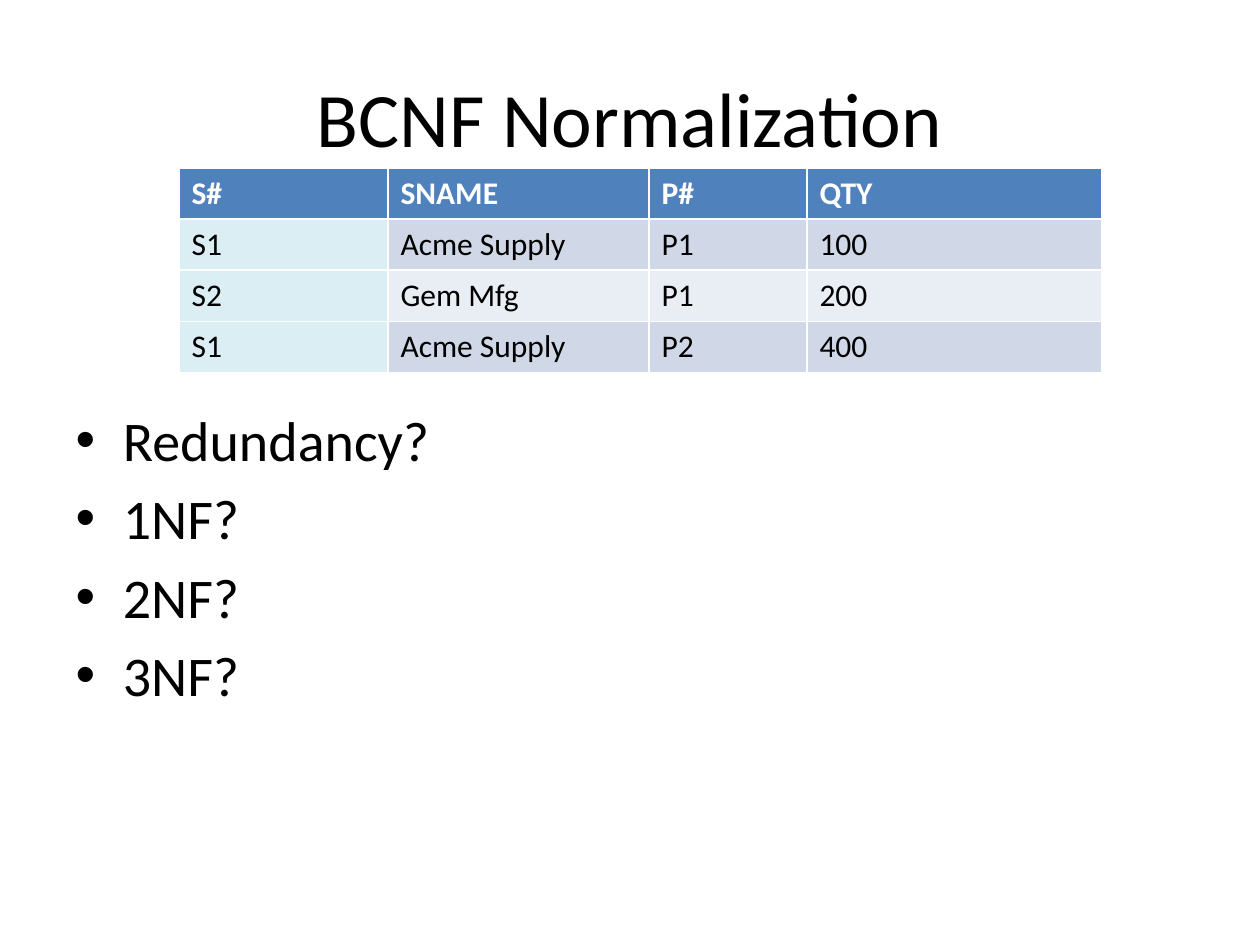
import pptx
import pptx.dml.color
import pptx.enum.text
import pptx.util

TITLE = "BCNF Normalization"
QUESTIONS = ["Redundancy?", "1NF?", "2NF?", "3NF?"]
SUPPLIES = [
    ("S#", "SNAME", "P#", "QTY"),
    ("S1", "Acme Supply", "P1", "100"),
    ("S2", "Gem Mfg", "P1", "200"),
    ("S1", "Acme Supply", "P2", "400"),
]

PX = 914400 // 126
SLIDE_SIZE = (1260, 945)
TITLE_BOX = (63, 38, 1134, 158)
BODY_BOX = (63, 399, 1134, 445)
TABLE_LEFT, TABLE_TOP = 179, 168
COLUMN_WIDTHS = [209, 261, 158, 295]
ROW_HEIGHT = 51

FONT = "Calibri"
BLACK, WHITE = "000000", "FFFFFF"
HEADER_FILL, KEY_FILL = "4F81BD", "DBEEF4"
BAND_FILLS = ["E9EDF4", "D0D8E8"]


def color(value):
    return pptx.dml.color.RGBColor.from_string(value)


def write(paragraph, text, size, fill=BLACK, bold=False, align=None):
    run = paragraph.add_run()
    run.text = text
    run.font.name = FONT
    run.font.size = pptx.util.Pt(size)
    run.font.bold = bold
    run.font.color.rgb = color(fill)
    paragraph.alignment = align


def place(shape, box):
    shape.left, shape.top, shape.width, shape.height = [length * PX for length in box]


def cell_fill(row, column):
    if row == 0:
        return HEADER_FILL
    return KEY_FILL if column == 0 else BAND_FILLS[row % 2]


def add_supplies(slide):
    box = (TABLE_LEFT, TABLE_TOP, sum(COLUMN_WIDTHS), ROW_HEIGHT * len(SUPPLIES))
    frame = slide.shapes.add_table(
        len(SUPPLIES), len(COLUMN_WIDTHS), *[length * PX for length in box])
    table = frame.table
    for column, width in zip(table.columns, COLUMN_WIDTHS):
        column.width = width * PX
    for row, values in enumerate(SUPPLIES):
        for column, value in enumerate(values):
            cell = table.cell(row, column)
            cell.fill.solid()
            cell.fill.fore_color.rgb = color(cell_fill(row, column))
            write(cell.text_frame.paragraphs[0], value, 18,
                  fill=WHITE if row == 0 else BLACK, bold=row == 0)


def main():
    presentation = pptx.Presentation()
    presentation.slide_width, presentation.slide_height = [
        length * PX for length in SLIDE_SIZE]
    slide = presentation.slides.add_slide(presentation.slide_layouts[1])

    title = slide.shapes.title
    place(title, TITLE_BOX)
    write(title.text_frame.paragraphs[0], TITLE, 44,
          align=pptx.enum.text.PP_ALIGN.CENTER)

    body = slide.placeholders[1]
    place(body, BODY_BOX)
    for index, question in enumerate(QUESTIONS):
        text_frame = body.text_frame
        paragraph = text_frame.add_paragraph() if index else text_frame.paragraphs[0]
        write(paragraph, question, 32)

    add_supplies(slide)
    presentation.save("out.pptx")


if __name__ == "__main__":
    main()
